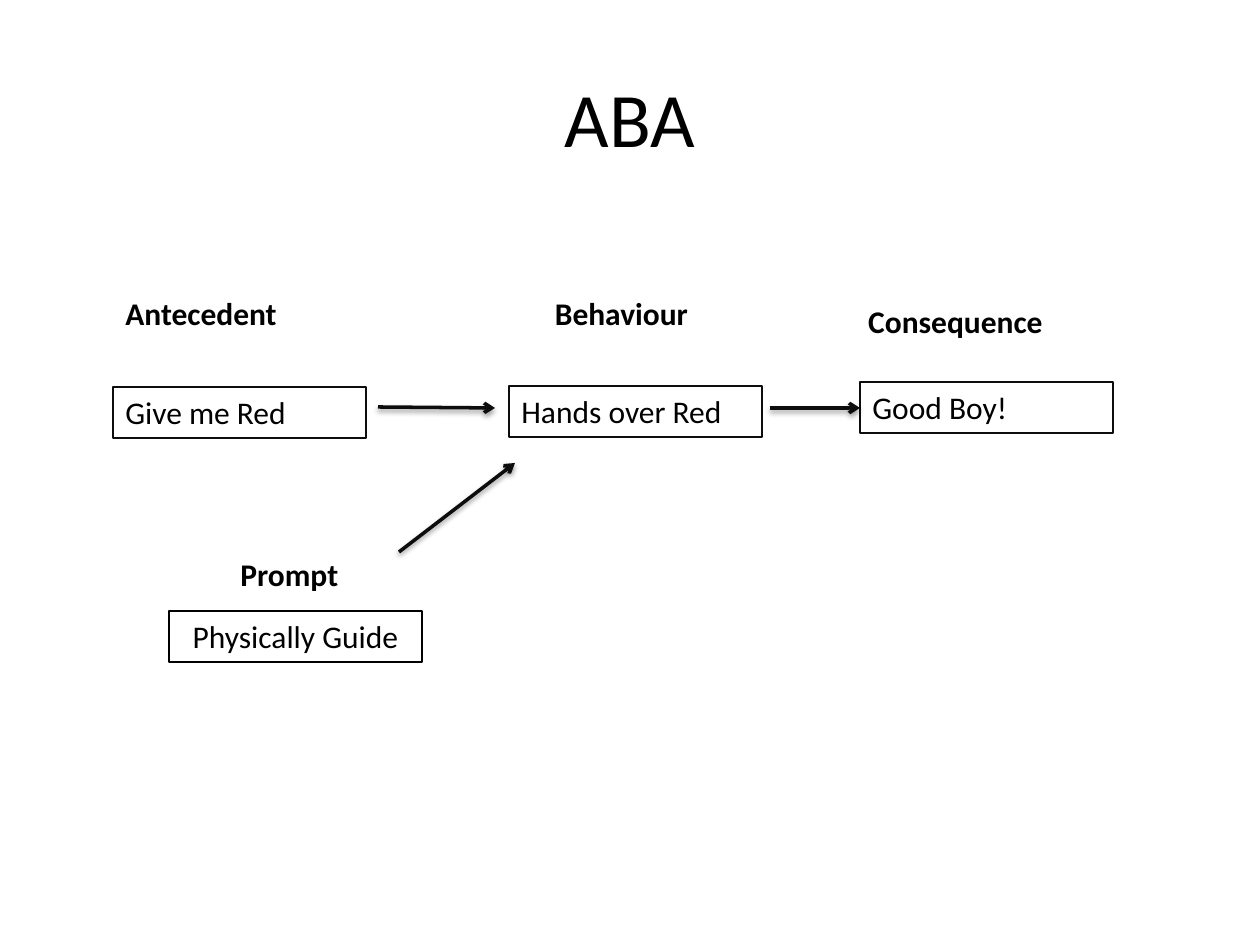
import pptx
import pptx.util
import pptx.dml.color
import pptx.enum.shapes
import pptx.enum.text
import pptx.oxml
import pptx.oxml.ns

HUES = {"text": "000000", "edge": "0D0D0D", "shade": "000000"}
FONT = "Calibri"
SCALE = 914400 / 126
WIDE, HIGH = 253, 51  # common label and box size
ALIGN = pptx.enum.text.PP_ALIGN
ANCHOR = pptx.enum.text.MSO_ANCHOR


def px(num):
    return pptx.util.Emu(round(num * SCALE))


def hue(name):
    return pptx.dml.color.RGBColor.from_string(HUES[name])


class Deck:
    def __init__(self, wide, high):
        self.prs = pptx.Presentation()
        self.prs.slide_width, self.prs.slide_height = px(wide), px(high)
        self.slide = self.prs.slides.add_slide(self.prs.slide_layouts[6])

    def words(self, shape, text, size, bold, align, anchor):
        frame = shape.text_frame
        frame.word_wrap = True
        frame.vertical_anchor = anchor
        para = frame.paragraphs[0]
        para.text, para.alignment = text, align
        font = para.font
        font.name, font.size, font.bold = FONT, pptx.util.Pt(size), bold
        font.color.rgb = hue("text")

    def label(self, text, x, y, wide=WIDE, high=HIGH, size=18, bold=True,
              align=ALIGN.LEFT, anchor=ANCHOR.TOP):
        area = self.slide.shapes.add_textbox(px(x), px(y), px(wide), px(high))
        self.words(area, text, size, bold, align, anchor)

    def box(self, text, x, y, align=ALIGN.LEFT, edge="edge"):
        rect = self.slide.shapes.add_shape(
            pptx.enum.shapes.MSO_SHAPE.RECTANGLE, px(x), px(y), px(WIDE), px(HIGH))
        rect.shadow.inherit = False
        rect.fill.background()
        rect.line.color.rgb = hue(edge)
        rect.line.width = pptx.util.Pt(0.75)
        self.words(rect, text, 18, False, align, ANCHOR.TOP)

    def arrow(self, x1, y1, x2, y2):
        link = self.slide.shapes.add_connector(
            pptx.enum.shapes.MSO_CONNECTOR.STRAIGHT, px(x1), px(y1), px(x2), px(y2))
        link.line.color.rgb = hue("edge")
        link.line.width = pptx.util.Pt(2)
        space = pptx.oxml.ns.nsdecls("a")
        props = link._element.spPr
        # Arrowhead and soft shadow
        props.find(pptx.oxml.ns.qn("a:ln")).append(
            pptx.oxml.parse_xml(f'<a:tailEnd {space} type="arrow"/>'))
        blur, dist = pptx.util.Pt(3.1), pptx.util.Pt(1.6)
        props.append(pptx.oxml.parse_xml(
            f'<a:effectLst {space}><a:outerShdw blurRad="{blur}" dist="{dist}" '
            f'dir="5400000" rotWithShape="0"><a:srgbClr val="{HUES["shade"]}">'
            '<a:alpha val="38000"/></a:srgbClr></a:outerShdw></a:effectLst>'))


def main():
    deck = Deck(1260, 945)

    # Title
    deck.label("ABA", 63, 38, 1134, 158, 44, False, ALIGN.CENTER, ANCHOR.MIDDLE)

    # Stage headings
    deck.label("Antecedent", 113, 288)
    deck.label("Behaviour", 495, 288, align=ALIGN.CENTER)
    deck.label("Consequence", 829, 296, align=ALIGN.CENTER)

    # Stage boxes
    deck.box("Give me Red", 113, 387)
    deck.box("Hands over Red", 509, 386)
    deck.box("Good Boy!", 860, 382)

    # Flow between stages
    deck.arrow(378, 407, 495, 408)
    deck.arrow(770, 408, 860, 408)
    deck.arrow(399, 552, 515, 463)

    # Prompt
    deck.label("Prompt", 228, 549)
    deck.box("Physically Guide", 169, 611, ALIGN.CENTER, "text")

    deck.prs.save("out.pptx")


if __name__ == "__main__":
    main()
